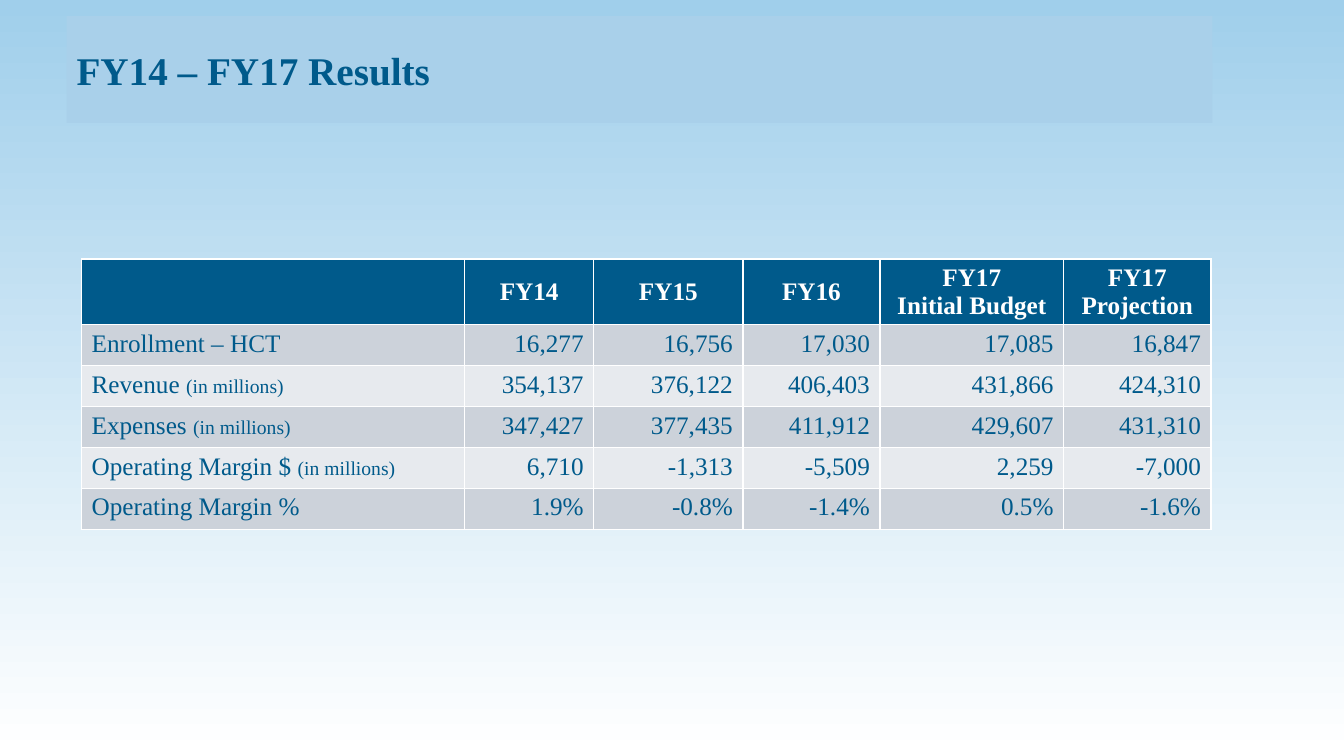
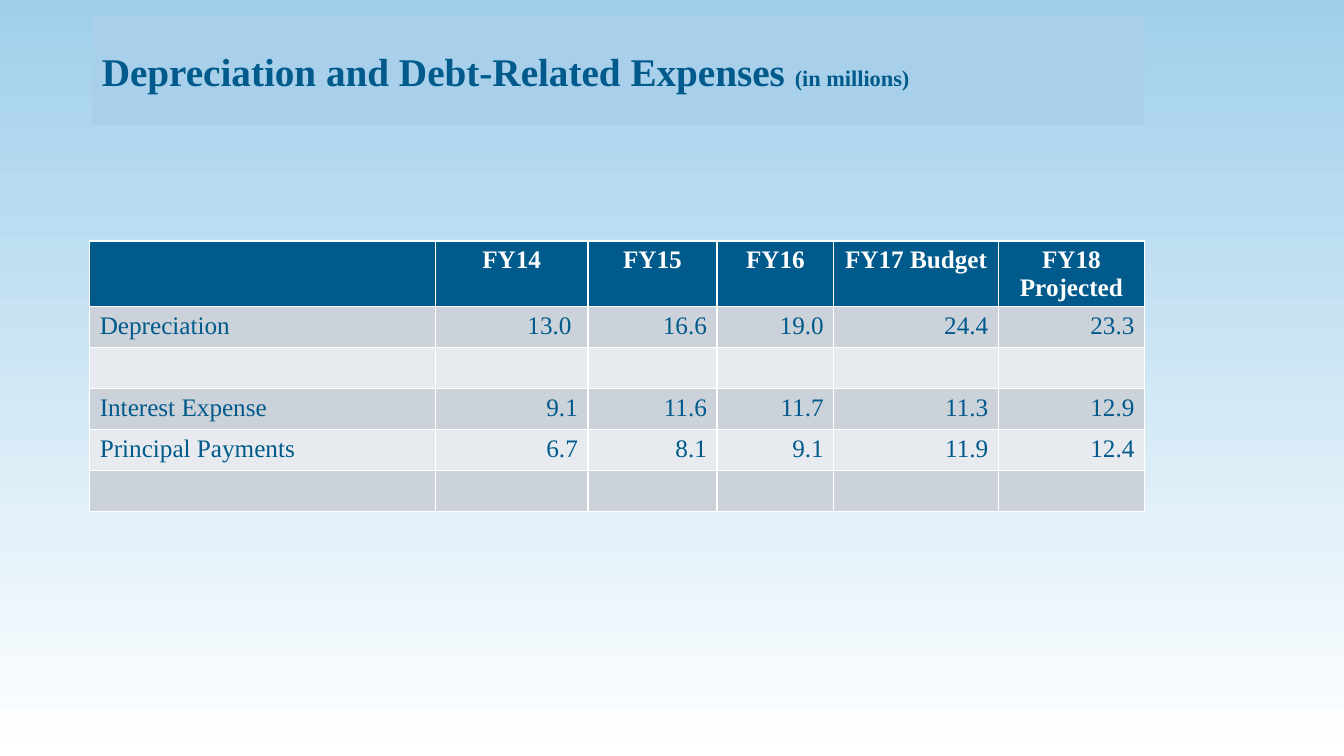
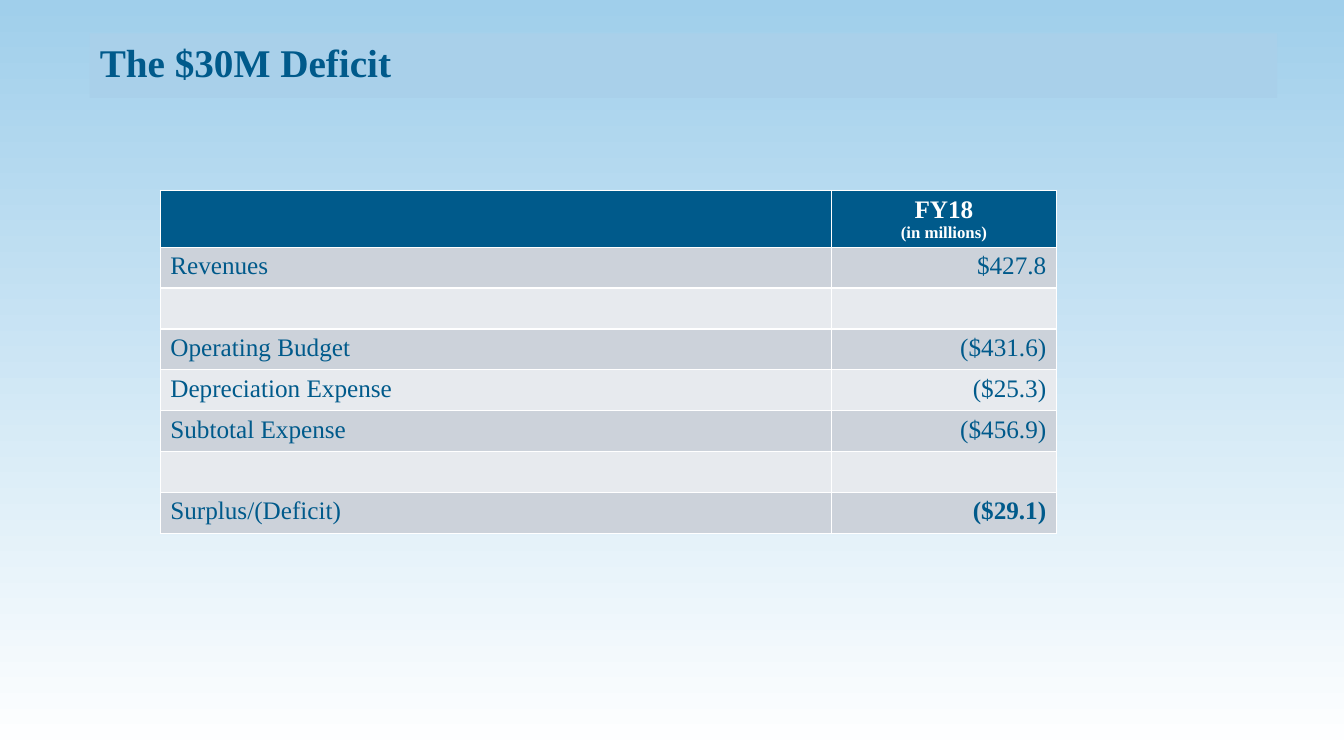
from dataclasses import dataclass

from pptx import Presentation
from pptx.dml.color import RGBColor
from pptx.enum import text as t
from pptx.slide import Slide
from pptx.text import text as tx
from pptx.util import Pt


@dataclass(frozen=True)
class Theme:
    font: str = "Times New Roman"
    sky: RGBColor = RGBColor.from_string("A0CFEB")
    white: RGBColor = RGBColor.from_string("FFFFFF")
    navy: RGBColor = RGBColor.from_string("005A8B")
    band: RGBColor = RGBColor.from_string("A9D0EA")
    odd_row: RGBColor = RGBColor.from_string("CCD2DA")
    even_row: RGBColor = RGBColor.from_string("E7EAEE")
    title_size: int = 28
    title_note_size: int = 16
    body_size: int = 18
    row_note_size: int = 14
    header_note_size: int = 12
    row_height: float = 29.2


THEME = Theme()


@dataclass(frozen=True)
class Span:
    text: str
    size: int | None = None
    bold: bool | None = None


Content = tuple[Span, ...] | str


@dataclass(frozen=True)
class Style:
    size: int
    color: RGBColor
    bold: bool
    align: t.PP_ALIGN


TITLE = Style(THEME.title_size, THEME.navy, True, t.PP_ALIGN.LEFT)
HEADER = Style(THEME.body_size, THEME.white, True, t.PP_ALIGN.CENTER)
LABEL = Style(THEME.body_size, THEME.navy, False, t.PP_ALIGN.LEFT)
FIGURE = Style(THEME.body_size, THEME.navy, False, t.PP_ALIGN.RIGHT)


@dataclass(frozen=True)
class Box:
    left: float
    top: float
    width: float
    height: float


@dataclass(frozen=True)
class Grid:
    left: float
    top: float
    header_height: float
    widths: tuple[float, ...]
    rows: tuple[tuple[Content, ...], ...]
    header_anchor: t.MSO_ANCHOR = t.MSO_ANCHOR.TOP


@dataclass(frozen=True)
class Page:
    title: Content
    title_box: Box
    grid: Grid
    title_anchor: t.MSO_ANCHOR = t.MSO_ANCHOR.MIDDLE


def in_millions(label: str) -> Content:
    return (Span(f"{label} "), Span("(in millions)", THEME.row_note_size))


PAGES = (
    Page(
        "FY14 – FY17 Results",
        Box(47.5, 11.5, 818.6, 76.3),
        Grid(
            58.3, 185, 47, (273.6, 92.2, 106.6, 97.9, 131.2, 105.3),
            (
                ("", "FY14", "FY15", "FY16", "FY17\nInitial Budget", "FY17 Projection"),
                ("Enrollment – HCT", "16,277", "16,756", "17,030", "17,085", "16,847"),
                (in_millions("Revenue"), "354,137", "376,122", "406,403", "431,866", "424,310"),
                (in_millions("Expenses"), "347,427", "377,435", "411,912", "429,607", "431,310"),
                (in_millions("Operating Margin $"), "6,710", "-1,313", "-5,509", "2,259", "-7,000"),
                ("Operating Margin %", "1.9%", "-0.8%", "-1.4%", "0.5%", "-1.6%"),
            ),
            t.MSO_ANCHOR.MIDDLE,
        ),
    ),
    Page(
        (
            Span("Depreciation and Debt-Related Expenses "),
            Span("(in millions)", THEME.title_note_size),
        ),
        Box(65.5, 11.5, 751.7, 77.8),
        Grid(
            64.1, 172.1, 47, (247, 108.9, 92.2, 83.5, 117.5, 104.4),
            (
                ("", "FY14", "FY15", "FY16", "FY17 Budget", "FY18\nProjected"),
                ("Depreciation", "13.0 ", "16.6", "19.0", "24.4", "23.3"),
                ("",) * 6,
                ("Interest Expense", "9.1", "11.6", "11.7", "11.3", "12.9"),
                ("Principal Payments", "6.7", "8.1", "9.1", "11.9", "12.4"),
                ("",) * 6,
            ),
        ),
    ),
    Page(
        "The $30M Deficit",
        Box(64.1, 23.8, 848.2, 46.1),
        Grid(
            114.5, 136.1, 40.4, (479.5, 160.6),
            (
                ("", (Span("FY18"), Span("\n(in millions)", THEME.header_note_size))),
                ("Revenues", "$427.8"),
                ("", ""),
                ("Operating Budget", "($431.6)"),
                ("Depreciation Expense", "($25.3)"),
                ("Subtotal Expense", "($456.9)"),
                ("", ""),
                ("Surplus/(Deficit)", (Span("($29.1)", bold=True),)),
            ),
        ),
        t.MSO_ANCHOR.TOP,
    ),
)


def write(frame: tx.TextFrame, content: Content, style: Style) -> None:
    spans = (Span(content),) if isinstance(content, str) else content
    para = frame.paragraphs[0]
    for span in spans:
        for index, piece in enumerate(span.text.split("\n")):
            if index:
                para = frame.add_paragraph()
            if piece:
                run = para.add_run()
                run.text = piece
                if span.size:
                    run.font.size = Pt(span.size)
                if span.bold:
                    run.font.bold = True
    for para in frame.paragraphs:
        para.alignment = style.align
        para.font.name = THEME.font
        para.font.size = Pt(style.size)
        para.font.bold = style.bold
        para.font.color.rgb = style.color


def add_title(slide: Slide, page: Page) -> None:
    title, box = slide.shapes.title, page.title_box
    title.left, title.top = Pt(box.left), Pt(box.top)
    title.width, title.height = Pt(box.width), Pt(box.height)
    title.fill.solid()
    title.fill.fore_color.rgb = THEME.band
    frame = title.text_frame
    frame.auto_size = t.MSO_AUTO_SIZE.NONE
    frame.vertical_anchor = page.title_anchor
    write(frame, page.title, TITLE)


def add_grid(slide: Slide, grid: Grid) -> None:
    heights = [grid.header_height] + [THEME.row_height] * (len(grid.rows) - 1)
    table = slide.shapes.add_table(
        len(grid.rows), len(grid.widths),
        Pt(grid.left), Pt(grid.top), Pt(sum(grid.widths)), Pt(sum(heights)),
    ).table
    for column, width in zip(table.columns, grid.widths):
        column.width = Pt(width)
    for row_index, (contents, height) in enumerate(zip(grid.rows, heights)):
        table.rows[row_index].height = Pt(height)
        is_header = row_index == 0
        stripe = THEME.odd_row if row_index % 2 else THEME.even_row
        for column_index, content in enumerate(contents):
            cell = table.cell(row_index, column_index)
            cell.fill.solid()
            cell.fill.fore_color.rgb = THEME.navy if is_header else stripe
            if is_header:
                cell.vertical_anchor = grid.header_anchor
            body_style = FIGURE if column_index else LABEL
            write(cell.text_frame, content, HEADER if is_header else body_style)


def main() -> None:
    deck = Presentation()
    deck.slide_width, deck.slide_height = Pt(960), Pt(540)
    backdrop = deck.slide_master.background.fill
    backdrop.gradient()
    backdrop.gradient_angle = 270
    for stop, color in zip(backdrop.gradient_stops, (THEME.sky, THEME.white)):
        stop.color.rgb = color
    for page in PAGES:
        slide = deck.slides.add_slide(deck.slide_layouts[5])
        add_title(slide, page)
        add_grid(slide, page.grid)
    deck.save("out.pptx")


if __name__ == "__main__":
    main()
